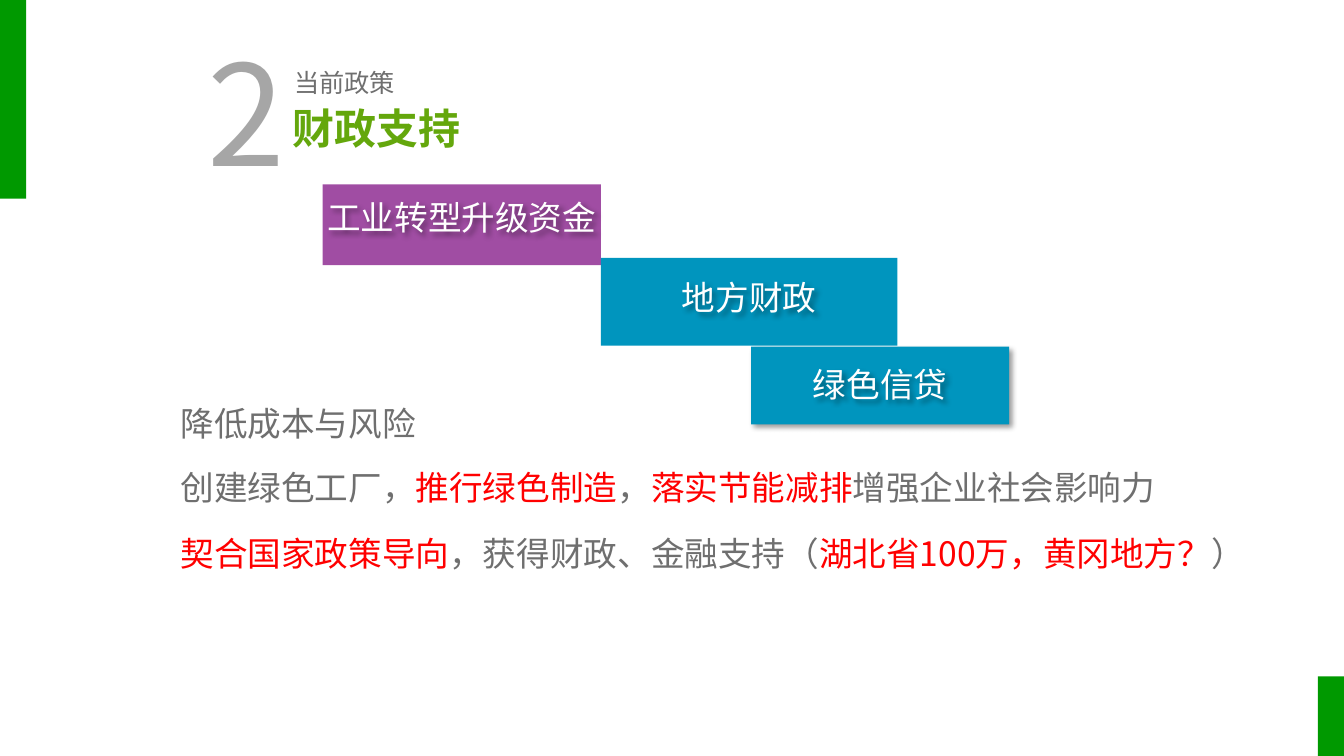
from lxml import etree
from pptx import Presentation
from pptx.dml.color import RGBColor
from pptx.enum.shapes import MSO_SHAPE
from pptx.enum.text import MSO_ANCHOR, MSO_AUTO_SIZE, PP_ALIGN
from pptx.oxml.ns import qn
from pptx.util import Inches, Pt

RECT = MSO_SHAPE.RECTANGLE
TOP, MIDDLE = MSO_ANCHOR.TOP, MSO_ANCHOR.MIDDLE
LEFT, CENTER, JUSTIFY = PP_ALIGN.LEFT, PP_ALIGN.CENTER, PP_ALIGN.JUSTIFY
FIXED = MSO_AUTO_SIZE.NONE

FONT = "Noto Sans CJK SC"
EDGE = RGBColor(0x00, 0x99, 0x00)
LEAF = RGBColor(0x64, 0xA7, 0x0C)
SILVER = RGBColor(0xA6, 0xA6, 0xA6)
GREY = RGBColor(0x6F, 0x6F, 0x6F)
RED = RGBColor(0xFF, 0x00, 0x00)
PURPLE = RGBColor(0xA0, 0x4D, 0xA3)
BLUE = RGBColor(0x00, 0x95, 0xBE)
WHITE = RGBColor(0xFF, 0xFF, 0xFF)
BLACK = "000000"

WIDE, HIGH = 13.33, 7.5
BAR = 0.26  # width of both edge bars
BARS = [(0, 0, BAR, 1.97), (WIDE - BAR, 6.71, BAR, HIGH - 6.71)]

NUMBER, TOPIC, TITLE = "2", "当前政策", "财政支持"

# label, colour, box, text inset from the top, shadow under the box
STEPS = [
    ("工业转型升级资金", PURPLE, (3.2, 1.83, 2.76, 0.8), 0.12, False),
    ("地方财政", BLUE, (5.96, 2.56, 2.94, 0.87), 0.19, False),
    ("绿色信贷", BLUE, (7.45, 3.44, 2.56, 0.77), 0.17, True),
]

# space before, then runs of text and colour
POINTS = [
    (0, [("降低成本与风险", GREY)]),
    (2, [("创建绿色工厂，", GREY), ("推行绿色制造", RED), ("，", GREY),
         ("落实节能减排", RED), ("增强企业社会影响力", GREY)]),
    (4, [("契合国家政策导向", RED), ("，获得财政、金融支持（", GREY),
         ("湖北省100万，黄冈地方？", RED), ("）", GREY)]),
]


def place(shape, box):
    shape.left, shape.top, shape.width, shape.height = map(Inches, box)


def write(shape, paras, size, align=LEFT, bold=False, anchor=TOP,
          inset=(0, 0), line=1.0):
    """Fill a shape with (space before, runs) paragraphs."""
    frame = shape.text_frame
    frame.word_wrap, frame.auto_size = True, FIXED
    frame.vertical_anchor = anchor
    frame.margin_left = frame.margin_right = Inches(inset[0])
    frame.margin_top = frame.margin_bottom = Inches(inset[1])
    for i, (gap, runs) in enumerate(paras):
        para = frame.add_paragraph() if i else frame.paragraphs[0]
        props = para._p.get_or_add_pPr()
        props.set("marL", "0")
        props.set("indent", "0")
        etree.SubElement(props, qn("a:buNone"))
        para.alignment, para.line_spacing = align, line
        para.space_before = Pt(gap)
        for text, color in runs:
            run = para.add_run()
            run.text = text
            font = run.font
            font.name, font.size, font.bold = FONT, Pt(size), bold
            font.color.rgb = color
            east = etree.SubElement(run._r.get_or_add_rPr(), qn("a:ea"))
            east.set("typeface", FONT)


def block(box, color):
    shape = slide.shapes.add_shape(RECT, *map(Inches, box))
    shape.shadow.inherit = False
    shape.fill.solid()
    shape.fill.fore_color.rgb = color
    shape.line.fill.background()
    return shape


def note(box, text, size, color, **form):
    shape = slide.shapes.add_textbox(*map(Inches, box))
    write(shape, [(0, [(text, color)])], size, **form)
    return shape


def shade(shape):
    """Give a shape a soft shadow to the lower right."""
    shape.shadow.inherit = False
    effects = shape._element.spPr.find(qn("a:effectLst"))
    outer = etree.SubElement(effects, qn("a:outerShdw"), blurRad=str(Pt(4)),
                             dist=str(Pt(3)), dir=str(45 * 60000))
    tint = etree.SubElement(outer, qn("a:srgbClr"), val=BLACK)
    etree.SubElement(tint, qn("a:alpha"), val="40000")


deck = Presentation()
deck.slide_width, deck.slide_height = Inches(WIDE), Inches(HIGH)
slide = deck.slides.add_slide(deck.slide_layouts[1])
title, body = slide.placeholders

for bar in BARS:
    block(bar, EDGE)

note((1.96, 0.21, 0.52, 1.78), NUMBER, 100, SILVER, inset=(0.1, 0.05))
note((2.82, 0.62, 1.54, 0.4), TOPIC, 18, GREY, align=JUSTIFY, inset=(0.1, 0.05))
place(title, (2.9, 1.02, 2.13, 0.5))
write(title, [(0, [(TITLE, LEAF)])], 30, align=JUSTIFY, bold=True, anchor=MIDDLE)

for label, color, box, drop, raised in STEPS:
    step = block(box, color)
    if raised:
        shade(step)
    left, top, width, _ = box
    shade(note((left, top + drop, width, 0.4), label, 24, WHITE, align=CENTER))

place(body, (1.79, 3.8, 11.18, 2.69))
write(body, POINTS, 24, align=JUSTIFY, line=1.5)

deck.save("out.pptx")
